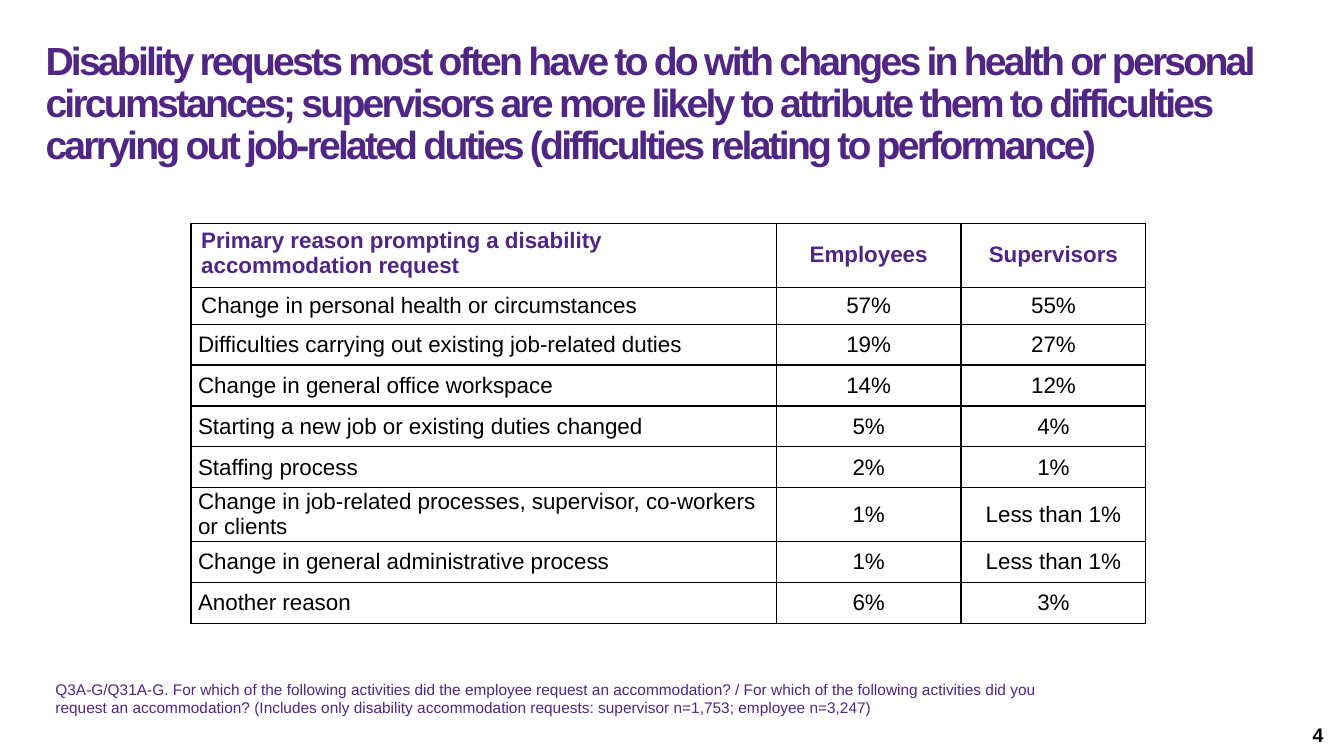
from lxml import etree
from pptx import Presentation
from pptx.dml.color import RGBColor
from pptx.enum.text import MSO_ANCHOR as ANCHOR, MSO_AUTO_SIZE as AUTO, PP_ALIGN as ALIGN
from pptx.oxml.ns import qn
from pptx.util import Pt

PURPLE = RGBColor(0x4F, 0x26, 0x84)
BLACK = RGBColor(0, 0, 0)
WHITE = RGBColor(0xFF, 0xFF, 0xFF)

TITLE = ("Disability requests most often have to do with changes in health or personal "
         "circumstances; supervisors are more likely to attribute them to difficulties "
         "carrying out job-related duties (difficulties relating to performance)")
REASONS = [
    ("Primary reason prompting a disability accommodation request", "Employees", "Supervisors"),
    ("Change in personal health or circumstances", "57%", "55%"),
    ("Difficulties carrying out existing job-related duties", "19%", "27%"),
    ("Change in general office workspace", "14%", "12%"),
    ("Starting a new job or existing duties changed", "5%", "4%"),
    ("Staffing process", "2%", "1%"),
    ("Change in job-related processes, supervisor, co-workers or clients", "1%", "Less than 1%"),
    ("Change in general administrative process", "1%", "Less than 1%"),
    ("Another reason", "6%", "3%"),
]
FOOTNOTE = ("Q3A-G/Q31A-G. For which of the following activities did the employee request an "
            "accommodation? / For which of the following activities did you request an "
            "accommodation? (Includes only disability accommodation requests: "
            "supervisor n=1,753; employee n=3,247)")


def write(tf, text, size, color, bold=False, align=ALIGN.LEFT):
    """Fill a text frame with one formatted paragraph and return it."""
    tf.text = text
    tf.word_wrap = True
    p = tf.paragraphs[0]
    p.alignment = align
    font = p.runs[0].font
    font.name, font.size, font.bold = "Arial", Pt(size), bold
    font.color.rgb = color
    return p


def set_borders(cell, color, width):
    tcPr = cell._tc.get_or_add_tcPr()
    for i, side in enumerate(("a:lnL", "a:lnR", "a:lnT", "a:lnB")):
        ln = etree.Element(qn(side), w=str(Pt(width)))
        fill = etree.SubElement(ln, qn("a:solidFill"))
        etree.SubElement(fill, qn("a:srgbClr"), val=str(color))
        tcPr.insert(i, ln)


def add_title(s, x, y, w, h):
    sp = s.shapes.title
    sp.left, sp.top, sp.width, sp.height = Pt(x), Pt(y), Pt(w), Pt(h)
    tf = sp.text_frame
    p = write(tf, TITLE, 28, PURPLE, bold=True)
    p.line_spacing = 0.9
    p.runs[0]._r.get_or_add_rPr().set("spc", "-200")
    tf.margin_left = tf.margin_right = 0
    tf.margin_top = tf.margin_bottom = Pt(1.5)
    tf.vertical_anchor = ANCHOR.TOP
    tf.auto_size = AUTO.SHAPE_TO_FIT_TEXT


def add_reason_table(s, x, y, w, h):
    value_w, first_h = 132, 20
    row_h = (h - first_h) / (len(REASONS) - 1)
    table = s.shapes.add_table(len(REASONS), 3, Pt(x), Pt(y), Pt(w), Pt(h)).table
    table.first_row = table.horz_banding = False
    for col, col_w in zip(table.columns, (w - 2 * value_w, value_w, value_w)):
        col.width = Pt(col_w)
    for i, row in enumerate(REASONS):
        table.rows[i].height = Pt(first_h if i == 1 else row_h)
        header = i == 0
        for j, text in enumerate(row):
            cell = table.cell(i, j)
            p = write(cell.text_frame, text, 16, PURPLE if header else BLACK, header,
                      ALIGN.CENTER if j else ALIGN.LEFT)
            cell.vertical_anchor = ANCHOR.TOP if header and j == 0 else ANCHOR.MIDDLE
            if header:
                cell.fill.background()
            else:
                cell.fill.solid()
                cell.fill.fore_color.rgb = WHITE
            # Rows below the leading reason are set tighter
            if i > 1:
                cell.margin_left = cell.margin_right = Pt(5)
                cell.margin_top = cell.margin_bottom = 0
                p.space_after = Pt(5.1)
            set_borders(cell, BLACK, 1)


def add_footnote(s, x, y, w, h):
    tf = s.shapes.add_textbox(Pt(x), Pt(y), Pt(w), Pt(h)).text_frame
    write(tf, FOOTNOTE, 11, PURPLE)
    tf.auto_size = AUTO.SHAPE_TO_FIT_TEXT


def add_page_number(s, x, y, w, h):
    tf = s.shapes.add_textbox(Pt(x), Pt(y), Pt(w), Pt(h)).text_frame
    write(tf, "4", 14, BLACK, bold=True, align=ALIGN.RIGHT)
    tf.vertical_anchor = ANCHOR.MIDDLE


def main():
    prs = Presentation()
    prs.slide_width, prs.slide_height = Pt(960), Pt(540)
    s = prs.slides.add_slide(prs.slide_layouts[5])
    # Heading, table, then the notes at the foot
    add_title(s, 32.5, 28, 875.5, 94.5)
    add_reason_table(s, 136.5, 159.5, 682, 254)
    add_footnote(s, 32.5, 482, 752.5, 34)
    add_page_number(s, 736.5, 510, 216, 29)
    prs.save("out.pptx")


if __name__ == "__main__":
    main()
